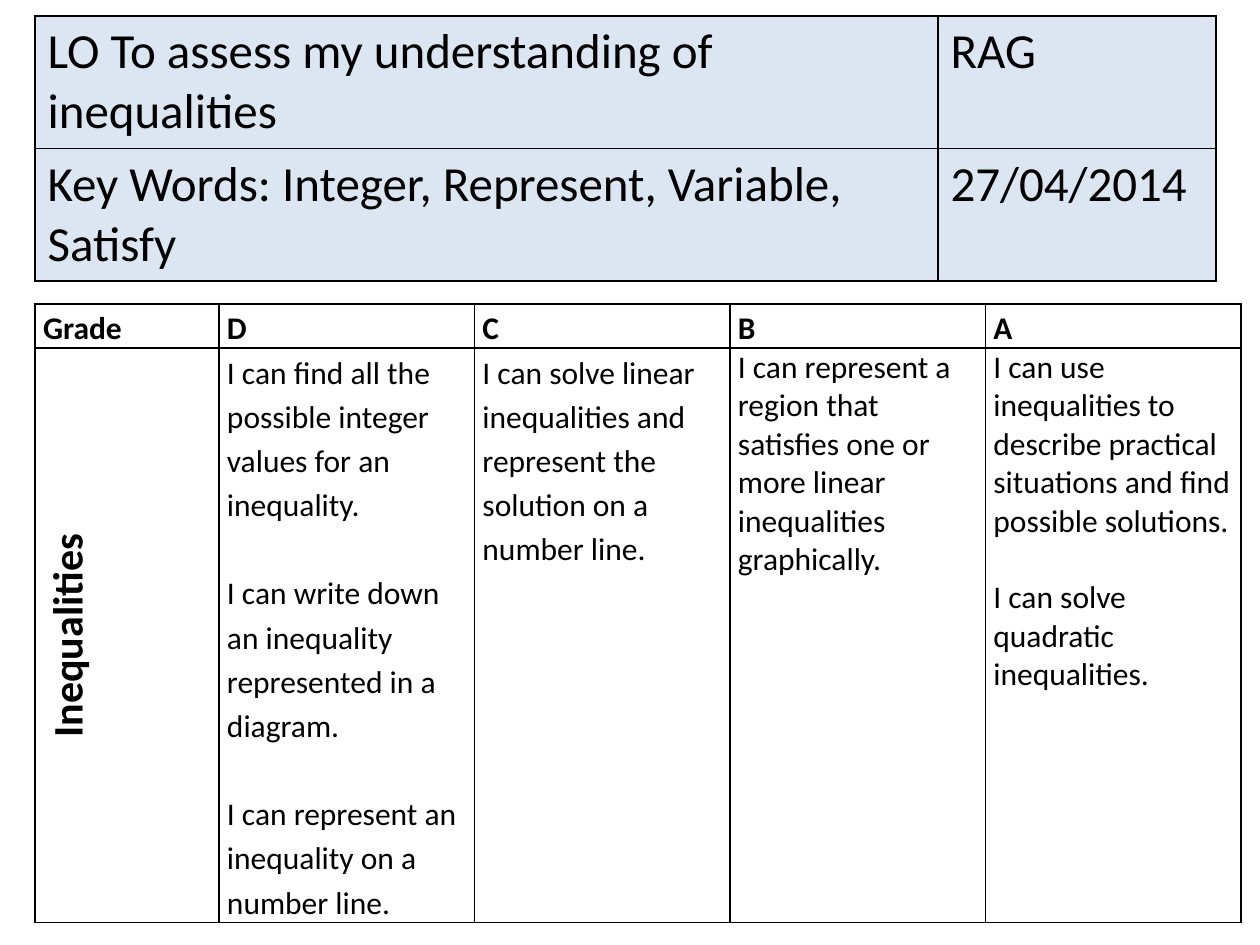
from dataclasses import dataclass

from lxml.etree import SubElement
from pptx import Presentation
from pptx.dml.color import RGBColor
from pptx.enum.text import PP_ALIGN
from pptx.oxml.ns import qn
from pptx.util import Emu, Pt


@dataclass(frozen=True)
class Theme:
    font: str = "Calibri"
    ink: str = "000000"
    banner: str = "DCE6F2"
    banner_size: int = 28
    topic_size: int = 24
    body_size: int = 18
    border: int = 1
    loose: float = 1.15
    gap_loose: float = 25.2
    gap_single: float = 22


THEME = Theme()


def px(n):
    """Pixels at 126 to the inch, as EMU."""
    return Emu(round(n * 914400 / 126))


def add_grid(s, left, top, widths, heights):
    """Place an unbanded table with the given column widths and row heights."""
    frame = s.shapes.add_table(len(heights), len(widths), px(left), px(top),
                               px(sum(widths)), px(sum(heights)))
    table = frame.table
    table.first_row = table.horz_banding = False
    for col, width in zip(table.columns, widths):
        col.width = px(width)
    for row, height in zip(table.rows, heights):
        row.height = px(height)
    return table


def style_cell(cell, fill=None):
    """Draw all four borders, then the fill."""
    tc_pr = cell._tc.get_or_add_tcPr()
    for side in ("lnL", "lnR", "lnT", "lnB"):
        ln = SubElement(tc_pr, qn(f"a:{side}"), w=str(Pt(THEME.border)))
        solid = SubElement(ln, qn("a:solidFill"))
        SubElement(solid, qn("a:srgbClr"), val=THEME.ink)
    if fill:
        cell.fill.solid()
        cell.fill.fore_color.rgb = RGBColor.from_string(fill)
    else:
        cell.fill.background()


def write(cell, paragraphs, size, bold=False, spacing=None, gap=0, align=None):
    """Fill a cell, with a gap before every paragraph but the first."""
    tf = cell.text_frame
    for i, text in enumerate(paragraphs):
        p = tf.add_paragraph() if i else tf.paragraphs[0]
        p.alignment = align
        p.line_spacing = spacing
        if i:
            p.space_before = Pt(gap)
        r = p.add_run()
        r.text = text
        r.font.name = THEME.font
        r.font.size = Pt(size)
        r.font.bold = bold
        r.font.color.rgb = RGBColor.from_string(THEME.ink)


def add_banner(s, left, top, width, height):
    """Learning objective, key words and date."""
    rows = [
        ("LO To assess my understanding of inequalities", "RAG"),
        ("Key Words: Integer, Represent, Variable, Satisfy", "27/04/2014"),
    ]
    side = 278
    table = add_grid(s, left, top, [width - side, side], [height / 2] * 2)
    for r, texts in enumerate(rows):
        for c, text in enumerate(texts):
            cell = table.cell(r, c)
            style_cell(cell, THEME.banner)
            write(cell, [text], THEME.banner_size)


def add_grades(s, left, top, width, height):
    """One column of skills for each grade, beside the turned topic name."""
    grades = {
        "D": ["I can find all the possible integer values for an inequality.",
              "I can write down an inequality represented in a diagram.",
              "I can represent an inequality on a number line."],
        "C": ["I can solve linear inequalities and represent the solution "
              "on a number line."],
        "B": ["I can represent a region that satisfies one or more linear "
              "inequalities graphically."],
        "A": ["I can use inequalities to describe practical situations and "
              "find possible solutions.",
              "I can solve quadratic inequalities."],
    }
    loose_grades = "DC"
    topic, header = 184, 44
    skill = (width - topic) / len(grades)
    table = add_grid(s, left, top, [topic] + [skill] * len(grades),
                     [header, height - header])
    for cell in table.iter_cells():
        style_cell(cell)
        cell.margin_left = cell.margin_right = px(8)
        cell.margin_top = cell.margin_bottom = 0

    # Header row
    for c, text in enumerate(["Grade", *grades]):
        write(table.cell(0, c), [text], THEME.body_size, True, THEME.loose)

    # Topic name, reading upwards
    cell = table.cell(1, 0)
    cell._tc.get_or_add_tcPr().set("vert", "vert270")
    write(cell, ["Inequalities"], THEME.topic_size, True, THEME.loose,
          align=PP_ALIGN.CENTER)

    # Skills
    for c, (grade, skills) in enumerate(grades.items(), 1):
        loose = grade in loose_grades
        write(table.cell(1, c), skills, THEME.body_size,
              spacing=THEME.loose if loose else None,
              gap=THEME.gap_loose if loose else THEME.gap_single)


def main():
    prs = Presentation()
    prs.slide_width, prs.slide_height = px(1260), px(945)
    s = prs.slides.add_slide(prs.slide_layouts[6])
    add_banner(s, 35, 16, 1181, 265)
    add_grades(s, 35, 304, 1206, 618)
    prs.save("out.pptx")


if __name__ == "__main__":
    main()
